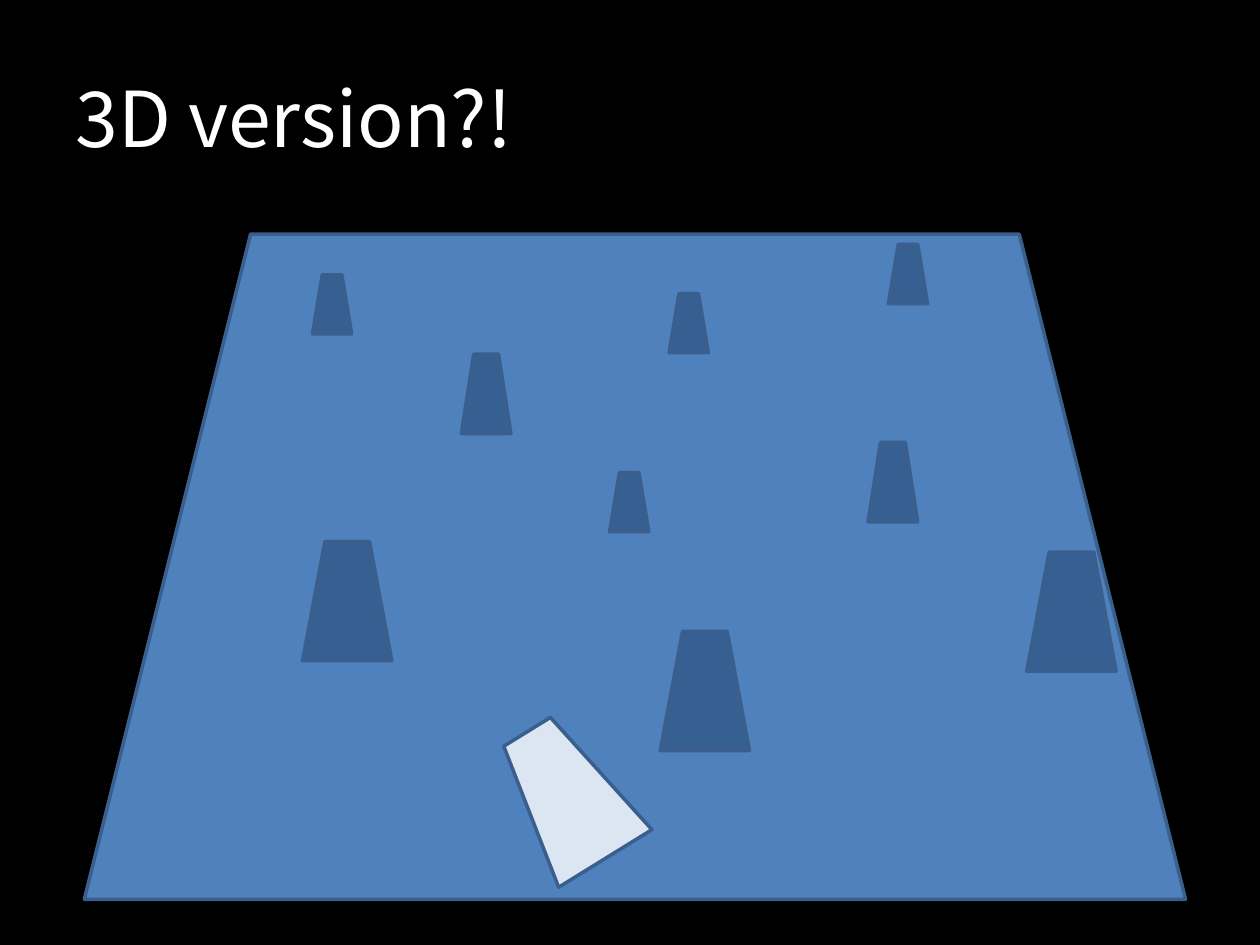
from pptx import Presentation
from pptx.dml.color import RGBColor
from pptx.enum.shapes import MSO_SHAPE
from pptx.enum.text import MSO_ANCHOR
from pptx.util import Cm, Pt

BLACK = RGBColor(0x00, 0x00, 0x00)
WHITE = RGBColor(0xFF, 0xFF, 0xFF)
FIELD_BLUE = RGBColor(0x4F, 0x81, 0xBD)
PILLAR_BLUE = RGBColor(0x37, 0x60, 0x92)
OUTLINE_BLUE = RGBColor(0x3A, 0x5F, 0x8C)
PALE_BLUE = RGBColor(0xDC, 0xE6, 0xF2)

PILLARS = {
    (0.79, 1.19): [(6.3, 5.54), (13.49, 5.92), (17.91, 4.93), (12.29, 9.53)],
    (1, 1.6): [(9.3, 7.14), (17.5, 8.92)],
    (1.8, 2.4): [(6.1, 10.92), (13.31, 12.73), (20.7, 11.13)],
}


def apply_format(target, values):
    for name, value in values.items():
        setattr(target, name, value)


class SlideBuilder:
    title_font = {"name": "Noto Sans CJK KR", "size": Pt(44)}
    title_frame = {"word_wrap": True, "vertical_anchor": MSO_ANCHOR.MIDDLE}
    outline = {"width": Pt(2)}

    def __init__(self, slide):
        self.slide = slide

    def background(self, color):
        fill = self.slide.background.fill
        fill.solid()
        fill.fore_color.rgb = color

    def title(self, text, left, top, width, height):
        box = self.slide.shapes.add_textbox(Cm(left), Cm(top), Cm(width), Cm(height))
        apply_format(box.text_frame, self.title_frame)
        run = box.text_frame.paragraphs[0].add_run()
        run.text = text
        apply_format(run.font, self.title_font)
        run.font.color.rgb = WHITE

    def trapezoid(self, left, top, width, height, color, rotation=0):
        shape = self.slide.shapes.add_shape(
            MSO_SHAPE.TRAPEZOID, Cm(left), Cm(top), Cm(width), Cm(height)
        )
        shape.rotation = rotation
        shape.shadow.inherit = False
        shape.fill.solid()
        shape.fill.fore_color.rgb = color
        apply_format(shape.line, self.outline)
        shape.line.color.rgb = OUTLINE_BLUE


def main():
    presentation = Presentation()
    apply_format(presentation, {"slide_width": Cm(25.4), "slide_height": Cm(19.05)})
    builder = SlideBuilder(presentation.slides.add_slide(presentation.slide_layouts[6]))
    builder.background(BLACK)
    builder.title("3D version?!", 1.27, 0.76, 22.86, 3.18)
    builder.trapezoid(1.7, 4.72, 22.2, 13.41, FIELD_BLUE)
    builder.trapezoid(10.31, 14.53, 2.21, 3, PALE_BLUE, rotation=328.3)
    for size, positions in PILLARS.items():
        for position in positions:
            builder.trapezoid(*position, *size, PILLAR_BLUE)
    presentation.save("out.pptx")


if __name__ == "__main__":
    main()
